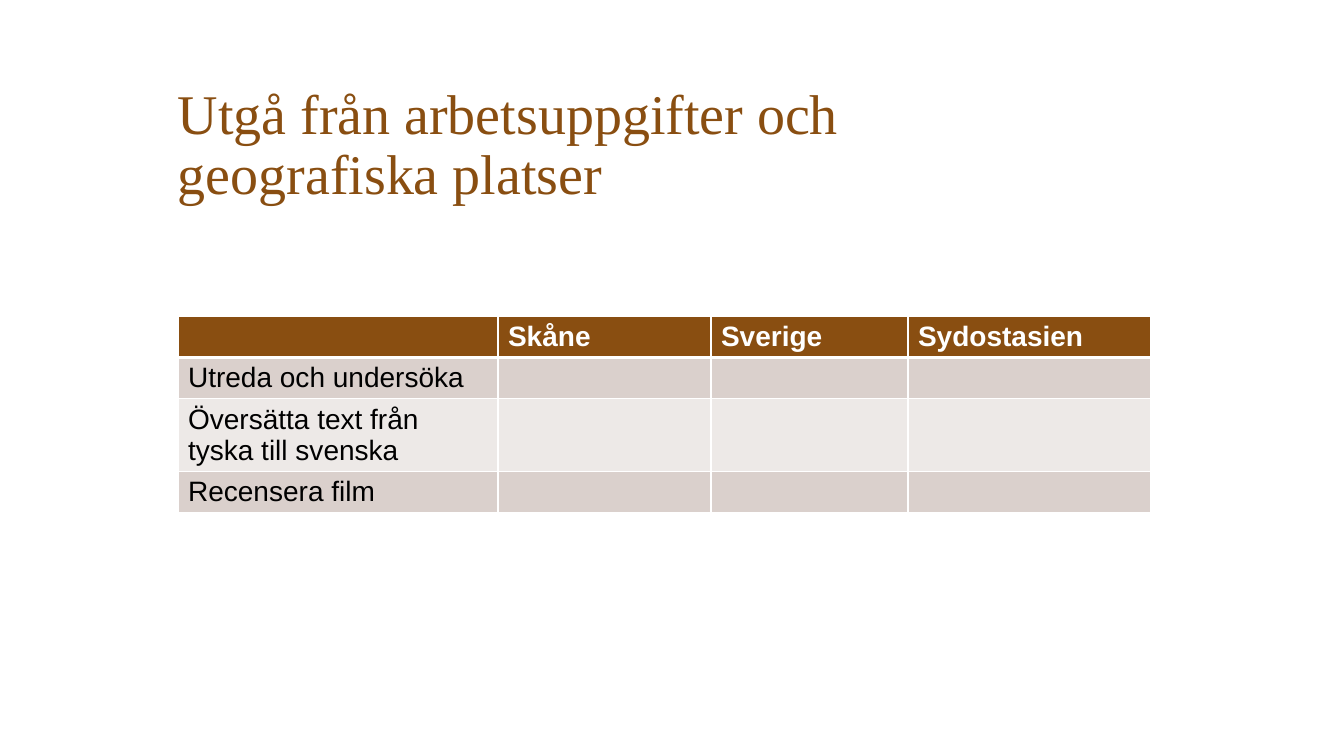
from lxml import etree
from pptx import Presentation
from pptx import util as u
from pptx.dml.color import RGBColor
from pptx.enum import text
from pptx.oxml.ns import qn

BROWN = RGBColor(0x89, 0x4E, 0x11)
BEIGE = RGBColor(0xDA, 0xD0, 0xCC)
LIGHT = RGBColor(0xED, 0xE9, 0xE7)
WHITE = RGBColor(0xFF, 0xFF, 0xFF)
BLACK = RGBColor(0x00, 0x00, 0x00)

LEFT, WIDTH = 178, 973
COLUMN_WIDTHS = [320, 213, 197, 243]
ROW_HEIGHT = 41
TITLE_LINES = ["Utgå från arbetsuppgifter och ", "geografiska platser"]
ROWS = [
    ["", "Skåne", "Sverige", "Sydostasien"],
    ["Utreda och undersöka", "", "", ""],
    ["Översätta text från tyska till svenska", "", "", ""],
    ["Recensera film", "", "", ""],
]


def px(length):
    return u.Emu(round(length * 914400 / 100.8))


def add_span(para, words, font, size, color, bold=False):
    span = para.add_run()
    span.text = words
    span.font.name = font
    span.font.size = u.Pt(size)
    span.font.color.rgb = color
    span.font.bold = bold


def add_title(page, lines):
    title = page.shapes.title
    title.left, title.top, title.width, title.height = map(px, (LEFT, 39, WIDTH, 199))
    frame = title.text_frame
    frame.word_wrap = True
    frame.auto_size = text.MSO_AUTO_SIZE.NONE
    frame.vertical_anchor = text.MSO_ANCHOR.BOTTOM
    frame.margin_left = frame.margin_top = frame.margin_right = 0
    frame.margin_bottom = px(31)
    para = frame.paragraphs[0]
    para.alignment = text.PP_ALIGN.LEFT
    para.line_spacing = 0.9
    for number, line in enumerate(lines):
        if number:
            para.add_line_break()
        add_span(para, line, "Times New Roman", 40, BROWN)


def set_borders(cell, top, bottom):
    properties = cell._tc.get_or_add_tcPr()
    for side, points in (("L", 1), ("R", 1), ("T", top), ("B", bottom)):
        line = etree.SubElement(properties, qn(f"a:ln{side}"), w=str(u.Pt(points)))
        fill = etree.SubElement(line, qn("a:solidFill"))
        etree.SubElement(fill, qn("a:srgbClr"), val=str(WHITE))


def add_grid(page, rows):
    frame = page.shapes.add_table(len(rows), len(COLUMN_WIDTHS), px(LEFT), px(316),
                                  px(WIDTH), px(ROW_HEIGHT * len(rows)))
    table = frame.table
    for column, width in zip(table.columns, COLUMN_WIDTHS):
        column.width = px(width)
    for r, words_in_row in enumerate(rows):
        table.rows[r].height = px(ROW_HEIGHT)
        header = r == 0
        color = BROWN if header else (BEIGE if r % 2 else LIGHT)
        for c, words in enumerate(words_in_row):
            cell = table.cell(r, c)
            # Thick rule between the header and the first row
            set_borders(cell, top=3 if r == 1 else 1, bottom=3 if header else 1)
            cell.fill.solid()
            cell.fill.fore_color.rgb = color
            if words:
                add_span(cell.text_frame.paragraphs[0], words, "Arial", 20,
                         WHITE if header else BLACK, header)


def main():
    deck = Presentation()
    deck.slide_width, deck.slide_height = px(1344), px(756)
    # Title Only layout
    page = deck.slides.add_slide(deck.slide_layouts[5])
    add_title(page, TITLE_LINES)
    add_grid(page, ROWS)
    deck.save("out.pptx")


if __name__ == "__main__":
    main()
